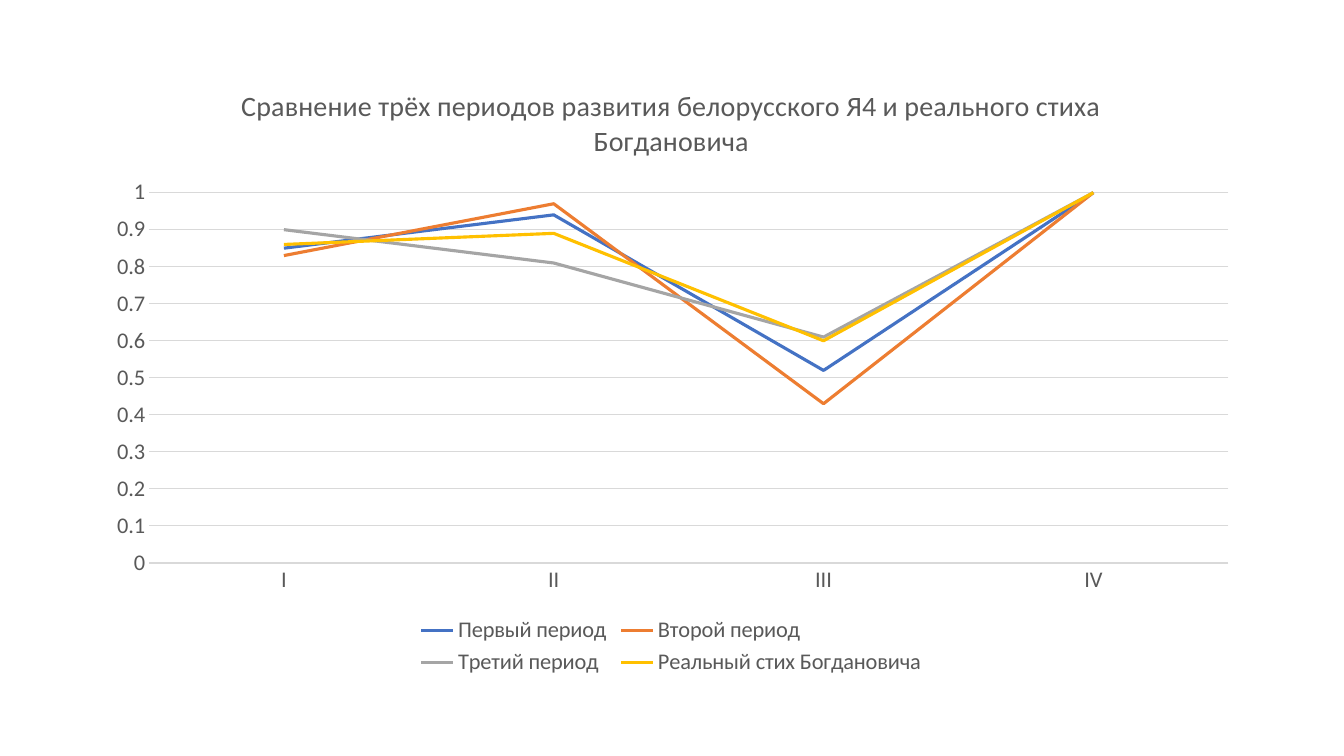
from dataclasses import dataclass

from lxml import etree
from pptx import Presentation
from pptx import util as u
from pptx.chart import data as chart_data
from pptx.dml.color import RGBColor
from pptx.enum import chart as kinds
from pptx.oxml import ns


@dataclass(frozen=True)
class Theme:
    font: str = "Calibri"
    title_size: float = 20
    label_size: float = 16
    text: str = "595959"
    grid: str = "D9D9D9"
    grid_width: float = 0.75
    series_width: float = 2.25
    series: tuple = ("4472C4", "ED7D31", "A5A5A5", "FFC000")


THEME = Theme()
TITLE = "Сравнение трёх периодов развития белорусского Я4 и реального стиха Богдановича"
FEET = ("I", "II", "III", "IV")
STRESS = {
    "Первый период": (0.85, 0.94, 0.52, 1),
    "Второй период": (0.83, 0.97, 0.43, 1),
    "Третий период": (0.9, 0.81, 0.61, 1),
    "Реальный стих Богдановича": (0.86, 0.89, 0.6, 1),
}


def style_font(font, size):
    font.name, font.size, font.bold = THEME.font, u.Pt(size), False
    font.color.rgb = RGBColor.from_string(THEME.text)


def style_line(line, color, width):
    line.color.rgb = RGBColor.from_string(color)
    line.width = u.Pt(width)


def place_plot(chart, **fractions):
    """Fix the inner plot area as fractions of the chart box."""
    plot_area = chart.plots[0]._element.getparent()
    for old in plot_area.findall(ns.qn("c:layout")):
        plot_area.remove(old)
    layout = etree.Element(ns.qn("c:layout"))
    manual = etree.SubElement(layout, ns.qn("c:manualLayout"))
    settings = {"layoutTarget": "inner", "xMode": "edge", "yMode": "edge", **fractions}
    for name, value in settings.items():
        etree.SubElement(manual, ns.qn(f"c:{name}")).set("val", str(value))
    plot_area.insert(0, layout)


def add_stress_chart(page, left, top, width, height):
    data = chart_data.CategoryChartData()
    data.categories = FEET
    for name, values in STRESS.items():
        data.add_series(name, values)
    box = [u.Pt(length) for length in (left, top, width, height)]
    chart = page.shapes.add_chart(kinds.XL_CHART_TYPE.LINE, *box, data).chart
    style_font(chart.font, THEME.label_size)

    # Title
    chart.has_title = True
    chart.chart_title.include_in_layout = False
    para = chart.chart_title.text_frame.paragraphs[0]
    para.text = TITLE
    style_font(para.runs[0].font, THEME.title_size)

    # Axes and gridlines
    for axis in (chart.category_axis, chart.value_axis):
        axis.major_tick_mark = axis.minor_tick_mark = kinds.XL_TICK_MARK.NONE
        style_font(axis.tick_labels.font, THEME.label_size)
    style_line(chart.category_axis.format.line, THEME.grid, THEME.grid_width)
    scale = chart.value_axis
    scale.minimum_scale, scale.maximum_scale, scale.major_unit = 0, 1, 0.1
    scale.format.line.fill.background()
    scale.has_major_gridlines = True
    style_line(scale.major_gridlines.format.line, THEME.grid, THEME.grid_width)

    # Series
    chart.plots[0].vary_by_categories = False
    for series, color in zip(chart.plots[0].series, THEME.series):
        series.smooth = False
        series.marker.style = kinds.XL_MARKER_STYLE.NONE
        style_line(series.format.line, color, THEME.series_width)

    # Legend and plot area
    chart.has_legend = True
    chart.legend.position = kinds.XL_LEGEND_POSITION.BOTTOM
    chart.legend.include_in_layout = False
    style_font(chart.legend.font, THEME.label_size)
    place_plot(chart, x=0.05, y=0.21, w=0.93, h=0.6)


def main():
    deck = Presentation()
    deck.slide_width, deck.slide_height = u.Pt(960), u.Pt(540)
    page = deck.slides.add_slide(deck.slide_layouts[6])
    add_stress_chart(page, left=65, top=45, width=829, height=441)
    deck.save("out.pptx")


if __name__ == "__main__":
    main()
